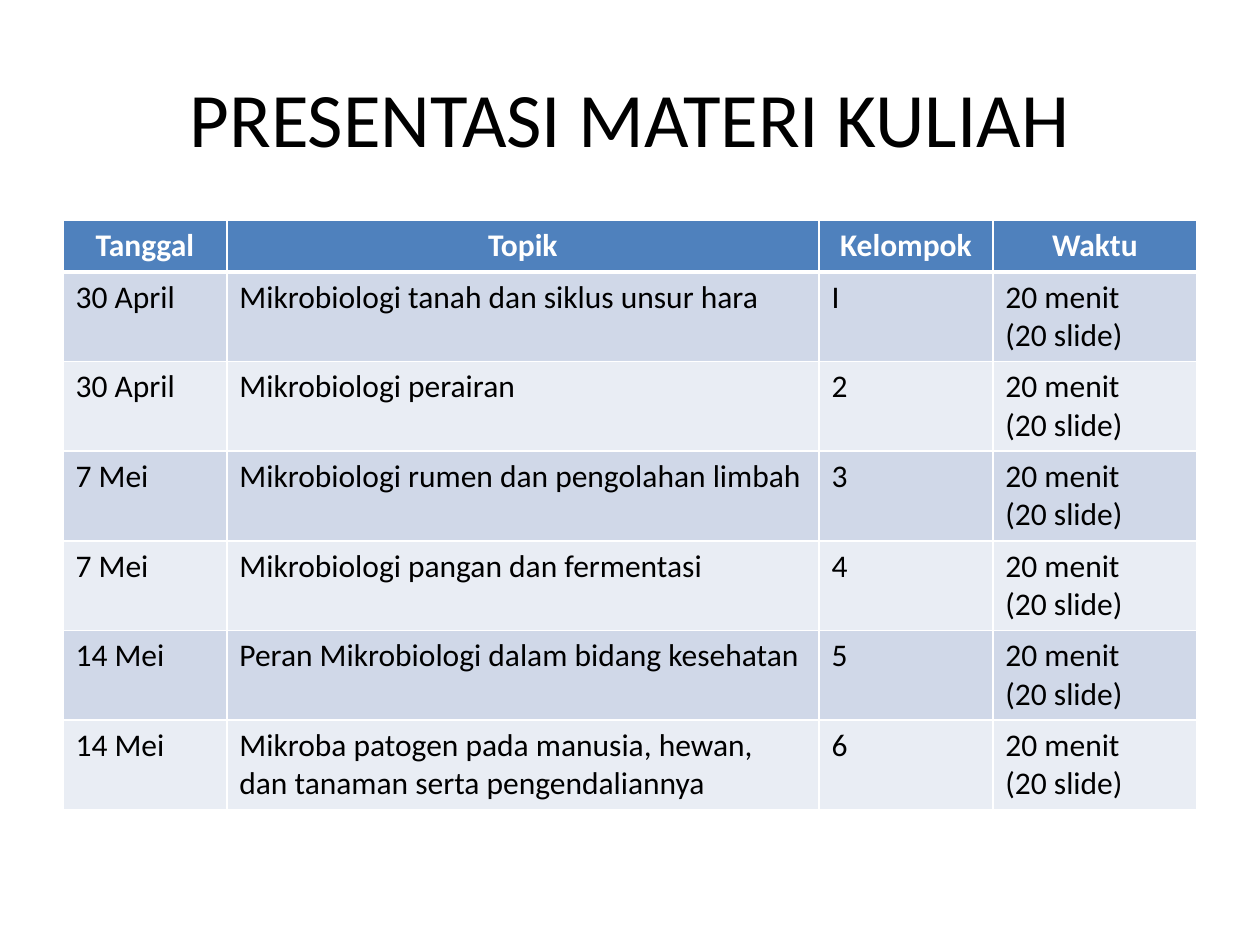
"""Build the course presentation schedule slide."""
from lxml.etree import SubElement
from pptx import Presentation
from pptx.dml.color import RGBColor
from pptx.enum.text import MSO_ANCHOR, PP_ALIGN
from pptx.oxml.ns import qn
from pptx.util import Inches, Pt

BLACK = RGBColor(0x00, 0x00, 0x00)
WHITE = RGBColor(0xFF, 0xFF, 0xFF)
HEADER_BLUE = RGBColor(0x4F, 0x81, 0xBD)
BAND_DARK = RGBColor(0xD0, 0xD8, 0xE8)
BAND_LIGHT = RGBColor(0xE9, 0xED, 0xF4)

TITLE_FORMAT = {"name": "Calibri", "size": Pt(44), "bold": False}
HEADER_FORMAT = {"name": "Calibri", "size": Pt(18), "bold": True}
BODY_FORMAT = {"name": "Calibri", "size": Pt(18), "bold": False}

COLUMN_WIDTHS = [1.3, 4.7, 1.38, 1.62]
HEADER_HEIGHT, ROW_HEIGHT = 0.41, 0.7
HEADERS = ["Tanggal", "Topik", "Kelompok", "Waktu"]
DURATION = "20 menit\n(20 slide)"
SCHEDULE = [
    ("30 April", "Mikrobiologi tanah dan siklus unsur hara", "I"),
    ("30 April", "Mikrobiologi perairan", "2"),
    ("7 Mei", "Mikrobiologi rumen dan pengolahan limbah", "3"),
    ("7 Mei", "Mikrobiologi pangan dan fermentasi", "4"),
    ("14 Mei", "Peran Mikrobiologi dalam bidang kesehatan", "5"),
    ("14 Mei", "Mikroba patogen pada manusia, hewan, dan tanaman serta pengendaliannya", "6"),
]


def format_text(text_frame, font_format, color, alignment):
    for paragraph in text_frame.paragraphs:
        paragraph.alignment = alignment
        for run in paragraph.runs:
            for name, value in font_format.items():
                setattr(run.font, name, value)
            run.font.color.rgb = color


def set_borders(cell, bottom_width):
    properties = cell._tc.get_or_add_tcPr()
    for side, width in {"lnL": 1, "lnR": 1, "lnT": 1, "lnB": bottom_width}.items():
        line = SubElement(properties, qn(f"a:{side}"), w=str(Pt(width)))
        fill = SubElement(line, qn("a:solidFill"))
        SubElement(fill, qn("a:srgbClr"), val=str(WHITE))


presentation = Presentation()
presentation.slide_width = Inches(10)
presentation.slide_height = Inches(7.5)
slide = presentation.slides.add_slide(presentation.slide_layouts.get_by_name("Title Only"))

title = slide.shapes.title
title.left, title.top, title.width, title.height = map(Inches, (0.5, 0.3, 9, 1.25))
title.text_frame.text = "PRESENTASI MATERI KULIAH"
title.text_frame.vertical_anchor = MSO_ANCHOR.MIDDLE
format_text(title.text_frame, TITLE_FORMAT, BLACK, PP_ALIGN.CENTER)

rows = [HEADERS] + [(*entry, DURATION) for entry in SCHEDULE]
table_height = HEADER_HEIGHT + ROW_HEIGHT * len(SCHEDULE)
table = slide.shapes.add_table(
    len(rows), len(HEADERS), Inches(0.5), Inches(1.75), Inches(9), Inches(table_height)
).table
for column, width in zip(table.columns, COLUMN_WIDTHS):
    column.width = Inches(width)

for row_index, texts in enumerate(rows):
    is_header = row_index == 0
    table.rows[row_index].height = Inches(HEADER_HEIGHT if is_header else ROW_HEIGHT)
    band = BAND_DARK if row_index % 2 else BAND_LIGHT
    for column_index, text in enumerate(texts):
        cell = table.cell(row_index, column_index)
        cell.text = text
        set_borders(cell, 3 if is_header else 1)
        cell.fill.solid()
        cell.fill.fore_color.rgb = HEADER_BLUE if is_header else band
        if is_header:
            format_text(cell.text_frame, HEADER_FORMAT, WHITE, PP_ALIGN.CENTER)
        else:
            format_text(cell.text_frame, BODY_FORMAT, BLACK, PP_ALIGN.LEFT)

presentation.save("out.pptx")
